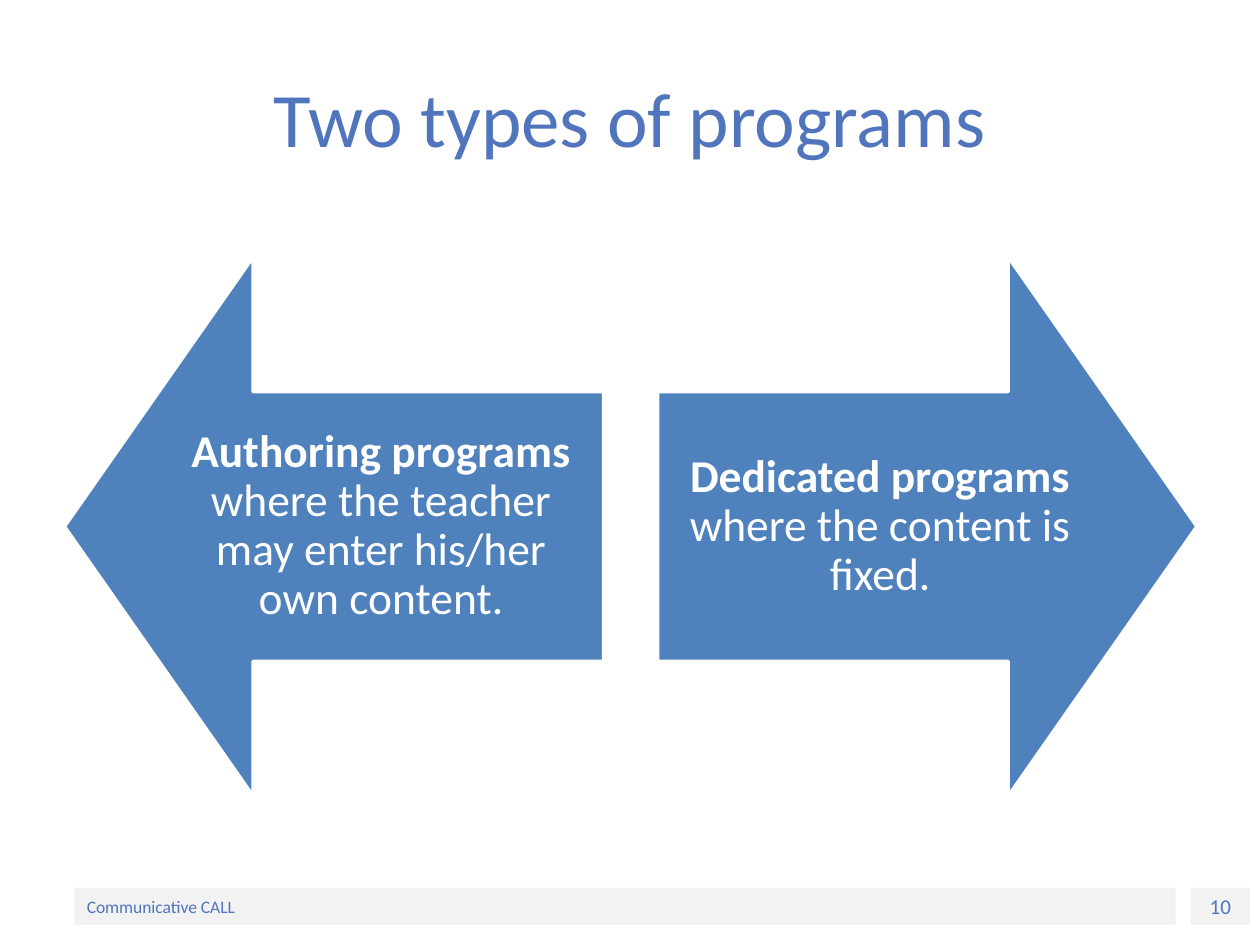
from pptx import Presentation
from pptx.dml.color import RGBColor
from pptx.enum.shapes import MSO_SHAPE as Shape
from pptx.enum.text import MSO_ANCHOR as Anchor, PP_ALIGN as Align
from pptx.util import Cm, Pt

BLUE, STEEL, GREY, WHITE = "5075BC", "4F81BD", "F2F2F2", "FFFFFF"
SIZE = 10.87   # side of an arrow's square
TOP = 5.18
WIDE = 8.97    # arrow text


def color(code):
    return RGBColor.from_string(code)


def write(shape, runs, size, code, align=Align.CENTER, inset=0.25):
    """Fill a shape with one paragraph made of (text, bold) runs."""
    frame = shape.text_frame
    frame.word_wrap = True
    frame.vertical_anchor = Anchor.MIDDLE
    frame.margin_left = frame.margin_right = Cm(inset)
    frame.margin_top = frame.margin_bottom = Cm(inset / 2)
    para = frame.paragraphs[0]
    para.alignment = align
    for text, bold in runs:
        run = para.add_run()
        run.text = text
        font = run.font
        font.name, font.size, font.bold = "Calibri", Pt(size), bold
        font.color.rgb = color(code)
    return para


def add_box(slide, kind, x, y, w, h, fill):
    box = slide.shapes.add_shape(kind, Cm(x), Cm(y), Cm(w), Cm(h))
    box.shadow.inherit = False
    box.fill.solid()
    box.fill.fore_color.rgb = color(fill)
    box.line.fill.background()
    return box


def add_text(slide, x, y, w, h, runs, size, code, **opts):
    box = slide.shapes.add_textbox(Cm(x), Cm(y), Cm(w), Cm(h))
    return write(box, runs, size, code, **opts)


def add_arrow(slide, kind, x, text_x, runs):
    arrow = add_box(slide, kind, x, TOP, SIZE, SIZE, STEEL)
    arrow.adjustments[0] = 0.5
    arrow.adjustments[1] = 0.35
    arrow.line.color.rgb = color(WHITE)
    arrow.line.width = Pt(2)
    para = add_text(slide, text_x, TOP + SIZE / 4, WIDE, SIZE / 2,
                    runs, 26, WHITE, inset=0.5)
    para.line_spacing = 0.9


def add_footer(slide, x, w, text, size, align):
    bar = add_box(slide, Shape.RECTANGLE, x, 17.9, w, 0.74, GREY)
    write(bar, [(text, False)], size, BLUE, align)


def main():
    deck = Presentation()
    deck.slide_width, deck.slide_height = Cm(25.4), Cm(19.05)
    slide = deck.slides.add_slide(deck.slide_layouts[6])

    add_footer(slide, 24, 1.2, "10", 12, Align.CENTER)
    add_footer(slide, 1.5, 22.2, "Communicative CALL", 10, Align.LEFT)
    add_text(slide, 1.27, 0.76, 22.86, 3.18,
             [("Two types of programs", False)], 44, BLUE)

    left, right = 1.3, 13.26
    add_arrow(slide, Shape.LEFT_ARROW, left, left + SIZE - WIDE, [
        ("Authoring programs ", True),
        ("where the teacher may enter his/her own content.", False)])
    add_arrow(slide, Shape.RIGHT_ARROW, right, right, [
        ("Dedicated programs", True),
        (" where the content is fixed.", False)])
    deck.save("out.pptx")


if __name__ == "__main__":
    main()
